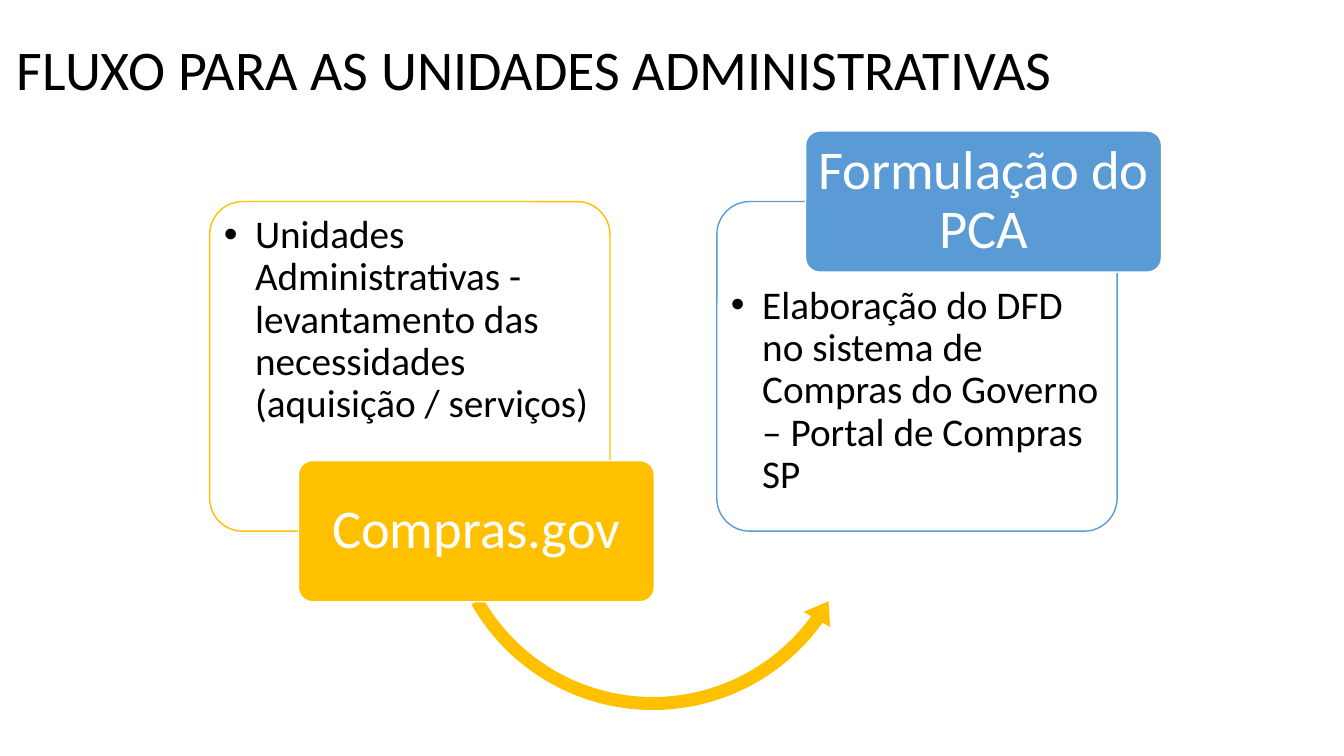
from lxml.etree import SubElement
from pptx import Presentation
from pptx.dml.color import RGBColor
from pptx.enum.shapes import MSO_SHAPE
from pptx.enum.text import MSO_ANCHOR, MSO_AUTO_SIZE, PP_ALIGN
from pptx.oxml.ns import qn
from pptx.util import Inches, Pt

GOLD = RGBColor(0xFF, 0xC0, 0x00)
BLUE = RGBColor(0x5B, 0x9B, 0xD5)
WHITE = RGBColor(0xFF, 0xFF, 0xFF)
BLACK = RGBColor(0x00, 0x00, 0x00)
FONT = "Calibri"

# Content: body text, label, colour, card left, body top, label top
TITLE = "FLUXO PARA AS UNIDADES ADMINISTRATIVAS"
STEPS = [
    ("Unidades Administrativas - levantamento das necessidades "
     "(aquisição / serviços)", "Compras.gov", GOLD, 2.08, 2.07, 4.57),
    ("Elaboração do DFD no sistema de Compras do Governo – "
     "Portal de Compras SP", "Formulação do PCA", BLUE, 7.11, 2.77, 1.3),
]
CARD_TOP, CARD_W, CARD_H = 2, 3.97, 3.27
BODY_W, BODY_H, BODY_GAP = 3.82, 2.42, 0.08
LABEL_W, LABEL_H, LABEL_GAP = 3.53, 1.4, 0.88
ARROW = (4.32, 2.82, 4.31, 4.31)
BEND = (0.03, 3.688, 21.443, 90.245, 0.035)

deck = Presentation()
deck.slide_width, deck.slide_height = Inches(13.33), Inches(7.5)
slide = deck.slides.add_slide(deck.slide_layouts[6])


def add_form(kind, box, fill, line=None):
    form = slide.shapes.add_shape(kind, *map(Inches, box))
    form.shadow.inherit = False
    form.fill.solid()
    form.fill.fore_color.rgb = fill
    if line is None:
        form.line.fill.background()
    else:
        form.line.color.rgb = line
        form.line.width = Pt(1)
    return form


def add_round(box, fill, line):
    form = add_form(MSO_SHAPE.ROUNDED_RECTANGLE, box, fill, line)
    form.adjustments[0] = 0.1
    return form


def set_pads(frame, side, top):
    frame.margin_left = frame.margin_right = Inches(side)
    frame.margin_top = frame.margin_bottom = Inches(top)


def add_run(para, text, size, color):
    run = para.add_run()
    run.text = text
    run.font.name = FONT
    run.font.size = Pt(size)
    run.font.color.rgb = color


def add_bullet(para, indent):
    props = para._p.get_or_add_pPr()
    props.set("marL", str(Inches(indent)))
    props.set("indent", str(-Inches(indent)))
    SubElement(props, qn("a:buFont")).set("typeface", "Arial")
    SubElement(props, qn("a:buChar")).set("char", "•")


def add_card(text, color, left, top):
    card = add_round((left, CARD_TOP, CARD_W, CARD_H), WHITE, color)
    tint = card._element.spPr.find(qn("a:solidFill"))[0]
    SubElement(tint, qn("a:alpha")).set("val", "90000")
    box = (left + BODY_GAP, top, BODY_W, BODY_H)
    frame = slide.shapes.add_textbox(*map(Inches, box)).text_frame
    frame.word_wrap = True
    set_pads(frame, 0.06, 0.06)
    para = frame.paragraphs[0]
    add_bullet(para, 0.31)
    para.level = 1
    para.line_spacing = 0.9
    add_run(para, text, 28, BLACK)


def add_label(text, color, left, top):
    form = add_round((left + LABEL_GAP, top, LABEL_W, LABEL_H), color, WHITE)
    frame = form.text_frame
    frame.word_wrap = True
    frame.vertical_anchor = MSO_ANCHOR.MIDDLE
    set_pads(frame, 0.08, 0.05)
    para = frame.paragraphs[0]
    para.alignment = PP_ALIGN.CENTER
    para.line_spacing = 0.9
    add_run(para, text, 39, WHITE)


# Cards with their body text
for body, label, color, left, body_top, label_top in STEPS:
    add_card(body, color, left, body_top)

# Curved arrow, behind the labels
arrow = add_form(MSO_SHAPE.LEFT_CIRCULAR_ARROW, ARROW, GOLD)
for i, value in enumerate(BEND):
    arrow.adjustments[i] = value

# Labels over the cards
for body, label, color, left, body_top, label_top in STEPS:
    add_label(label, color, left, label_top)

# Title
head = slide.shapes.add_textbox(*map(Inches, (0.07, 0.29, 10.58, 0.77)))
head.text_frame.word_wrap = False
head.text_frame.auto_size = MSO_AUTO_SIZE.SHAPE_TO_FIT_TEXT
add_run(head.text_frame.paragraphs[0], TITLE, 40, BLACK)

deck.save("out.pptx")
